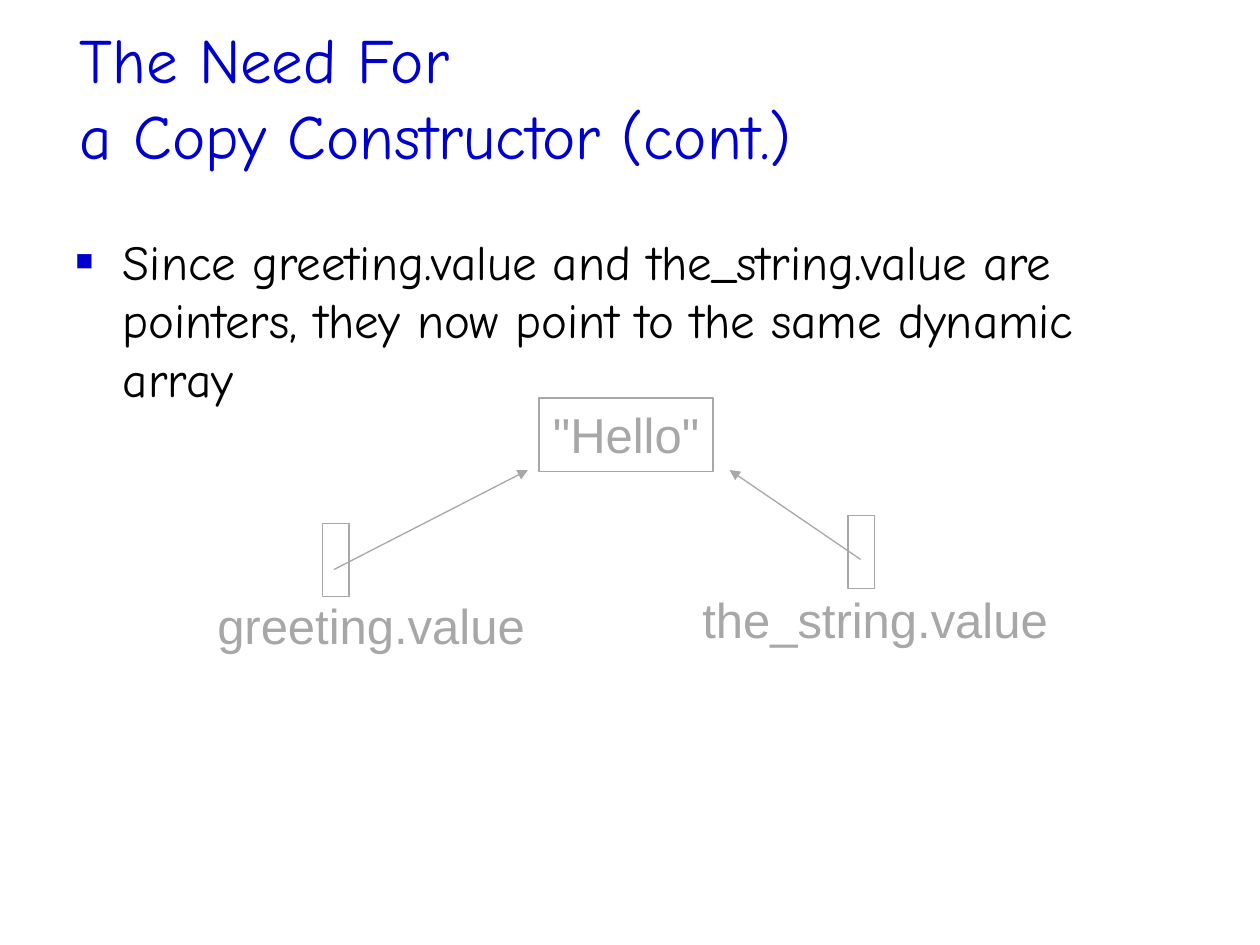
from lxml.etree import SubElement
from pptx import Presentation
from pptx.dml.color import RGBColor
from pptx.enum.shapes import MSO_CONNECTOR, MSO_SHAPE
from pptx.enum.text import MSO_ANCHOR, MSO_AUTO_SIZE, PP_ALIGN
from pptx.oxml.ns import qn
from pptx.util import Pt

COLORS = {"heading": "0000CC", "body": "000000", "diagram": "A7A7A7"}


def color(name):
    return RGBColor.from_string(COLORS[name])


def write_text(shape, text, font, size, ink, align=PP_ALIGN.LEFT,
               anchor=MSO_ANCHOR.TOP, inset=(0, 0), wrap=True, space_before=0):
    frame = shape.text_frame
    frame.word_wrap = wrap
    frame.auto_size = MSO_AUTO_SIZE.NONE
    frame.vertical_anchor = anchor
    frame.margin_left = frame.margin_right = Pt(inset[0])
    frame.margin_top = frame.margin_bottom = Pt(inset[1])
    paragraph = frame.paragraphs[0]
    paragraph.text = text
    paragraph.alignment = align
    paragraph.space_before = Pt(space_before)
    for run in paragraph.runs:
        run.font.name = font
        run.font.size = Pt(size)
        run.font.color.rgb = color(ink)
    return paragraph


class SlideBuilder:
    text_font = "Comic Neue"
    diagram_font = "Arial"
    line_width = 0.75

    def __init__(self, presentation):
        self.slide = presentation.slides.add_slide(presentation.slide_layouts[1])

    def place(self, shape, left, top, width, height):
        shape.left, shape.top = Pt(left), Pt(top)
        shape.width, shape.height = Pt(width), Pt(height)
        return shape

    def title(self, text, *bounds):
        shape = self.place(self.slide.shapes.title, *bounds)
        write_text(shape, text, self.text_font, 36, "heading",
                   anchor=MSO_ANCHOR.BOTTOM, inset=(3.6, 3.6))

    def bullet(self, text, *bounds):
        shape = self.place(self.slide.placeholders[1], *bounds)
        paragraph = write_text(shape, text, self.text_font, 28, "body",
                               space_before=6)
        properties = paragraph._p.get_or_add_pPr()
        properties.set("marL", str(Pt(27)))
        properties.set("indent", str(Pt(-27)))
        bullet_color = SubElement(properties, qn("a:buClr"))
        SubElement(bullet_color, qn("a:srgbClr"), val=COLORS["heading"])
        SubElement(properties, qn("a:buSzPct"), val="60000")
        SubElement(properties, qn("a:buChar"), char="■")

    def diagram_text(self, shape, text):
        write_text(shape, text, self.diagram_font, 28, "diagram",
                   align=PP_ALIGN.CENTER, inset=(7.2, 3.6), wrap=False,
                   space_before=5.6)

    def label(self, text, left, top, width, height):
        shape = self.slide.shapes.add_textbox(
            Pt(left), Pt(top), Pt(width), Pt(height))
        self.diagram_text(shape, text)

    def box(self, left, top, width, height, text=None):
        shape = self.slide.shapes.add_shape(
            MSO_SHAPE.RECTANGLE, Pt(left), Pt(top), Pt(width), Pt(height))
        shape.shadow.inherit = False
        shape.fill.background()
        shape.line.color.rgb = color("diagram")
        shape.line.width = Pt(self.line_width)
        if text:
            self.diagram_text(shape, text)

    def arrow(self, start, end):
        connector = self.slide.shapes.add_connector(
            MSO_CONNECTOR.STRAIGHT, *map(Pt, start + end))
        connector.line.color.rgb = color("diagram")
        connector.line.width = Pt(self.line_width)
        SubElement(connector.line._get_or_add_ln(), qn("a:tailEnd"), type="triangle")
        SubElement(connector._element.spPr, qn("a:effectLst"))


def main():
    presentation = Presentation()
    presentation.slide_width, presentation.slide_height = Pt(720), Pt(540)
    builder = SlideBuilder(presentation)
    builder.title("The Need For \va Copy Constructor (cont.)", 42, 0, 654, 102)
    builder.bullet(
        "Since greeting.value and the_string.value are\v"
        "pointers, they now point to the same dynamic \varray",
        43.2, 132, 653, 408)

    box_height = 41.8
    builder.box(308, 227.5, 99.5, box_height, '"Hello"')
    pointers = [
        ("greeting.value", (116.6, 337, 190.8), (184.3, 299), (190.8, 325.5), (301.7, 268.6)),
        ("the_string.value", (393.8, 333.4, 212.4), (484.6, 294.5), (491.8, 319.7), (416.9, 268.6)),
    ]
    for name, label_bounds, box_corner, start, end in pointers:
        builder.label(name, *label_bounds, 41)
        builder.box(*box_corner, 15.1, box_height)
        builder.arrow(start, end)
    presentation.save("out.pptx")


if __name__ == "__main__":
    main()
